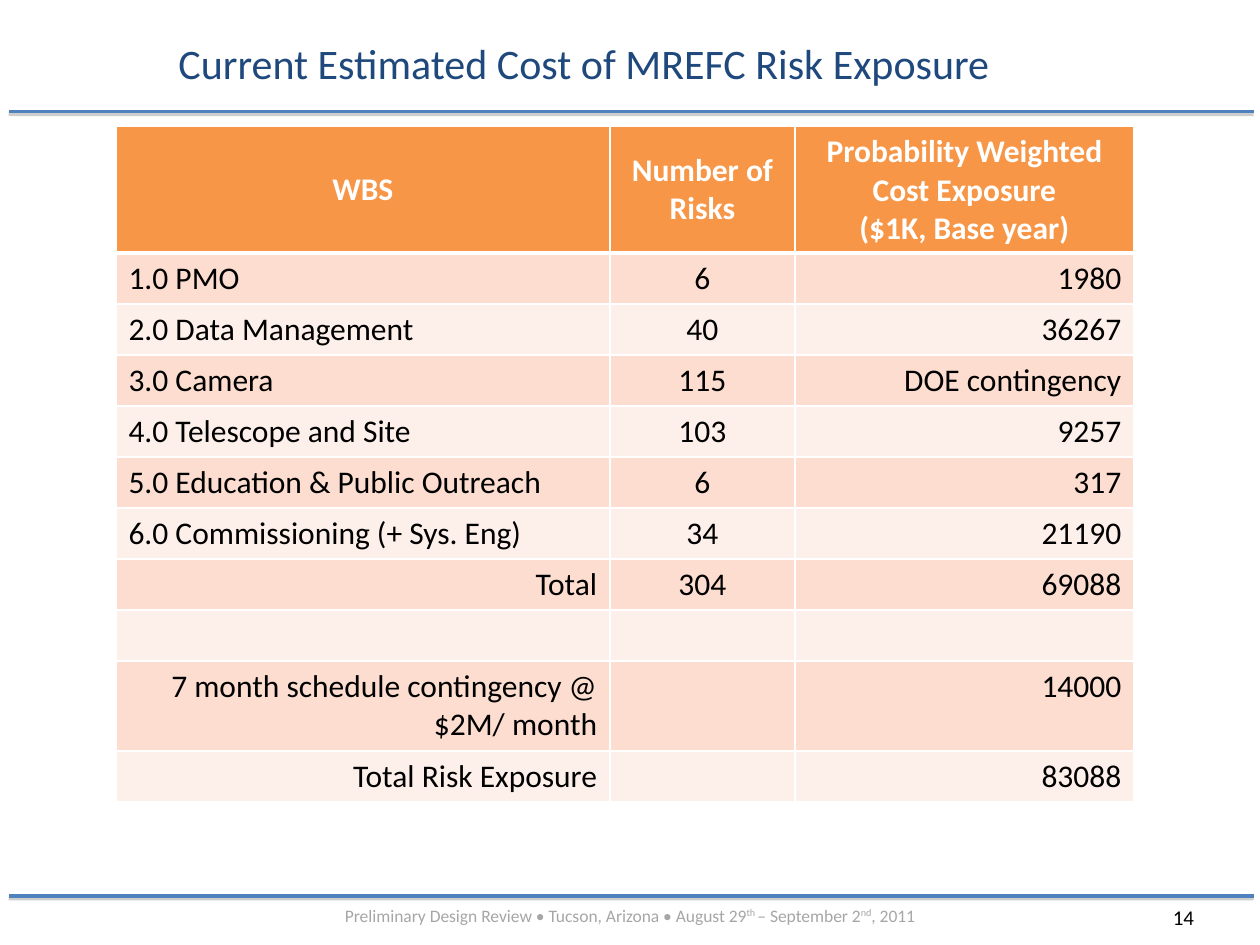
from lxml import etree
from pptx import Presentation
from pptx.dml.color import RGBColor
from pptx.enum.shapes import MSO_CONNECTOR
from pptx.enum.text import MSO_ANCHOR, PP_ALIGN
from pptx.oxml import parse_xml
from pptx.oxml.ns import nsdecls, qn
from pptx.util import Pt

LEFT, CENTER, RIGHT = PP_ALIGN.LEFT, PP_ALIGN.CENTER, PP_ALIGN.RIGHT
TOP, MIDDLE = MSO_ANCHOR.TOP, MSO_ANCHOR.MIDDLE
STRAIGHT = MSO_CONNECTOR.STRAIGHT

BLACK = RGBColor(0x00, 0x00, 0x00)
WHITE = RGBColor(0xFF, 0xFF, 0xFF)
GREY = RGBColor(0xA6, 0xA6, 0xA6)
NAVY = RGBColor(0x1F, 0x49, 0x7D)
BLUE = RGBColor(0x4F, 0x81, 0xBD)
ORANGE = RGBColor(0xF7, 0x96, 0x46)
DARK_BAND = RGBColor(0xFC, 0xDD, 0xCF)
LIGHT_BAND = RGBColor(0xFD, 0xEF, 0xE9)

TITLE_FORMAT = {"name": "Calibri", "size": Pt(24)}
FOOTER_FORMAT = {"name": "Calibri", "size": Pt(10)}
NUMBER_FORMAT = {"name": "Calibri", "size": Pt(12)}
HEADER_FORMAT = {"name": "Calibri", "size": Pt(18), "bold": True}
BODY_FORMAT = {"name": "Calibri", "size": Pt(18), "bold": False}

FOOTER_RUNS = [
    ("Preliminary Design Review • Tucson, Arizona • August 29", False),
    ("th ", True),
    ("– September 2", False),
    ("nd", True),
    (", 2011", False),
]
HEADERS = ["WBS", "Number of Risks", "Probability Weighted Cost Exposure\n($1K, Base year)"]
ITEMS = [
    ("1.0 PMO", "6", "1980"),
    ("2.0 Data Management", "40", "36267"),
    ("3.0 Camera", "115", "DOE contingency"),
    ("4.0 Telescope and Site", "103", "9257"),
    ("5.0 Education & Public Outreach", "6", "317"),
    ("6.0 Commissioning (+ Sys. Eng)", "34", "21190"),
]
TOTALS = [
    ("Total", "304", "69088"),
    ("", "", ""),
    ("7 month schedule contingency @ $2M/ month", "", "14000"),
    ("Total Risk Exposure", "", "83088"),
]
COLUMN_WIDTHS = [282.24, 105.84, 193.68]
HEADER_HEIGHT, ROW_HEIGHT, TALL_HEIGHT = 72.3, 29.16, 51.4
TALL_ROW = 9


def apply_format(font, values, color):
    """Set font attributes and colour."""
    for name, value in values.items():
        setattr(font, name, value)
    font.color.rgb = color


def add_text(slide, box, runs, values, color, align=LEFT, anchor=TOP):
    """Add a one-paragraph text box of (text, superscript) runs."""
    frame = slide.shapes.add_textbox(*map(Pt, box)).text_frame
    frame.word_wrap = True
    frame.vertical_anchor = anchor
    paragraph = frame.paragraphs[0]
    paragraph.alignment = align
    for text, superscript in runs:
        run = paragraph.add_run()
        run.text = text
        apply_format(run.font, values, color)
        if superscript:
            run.font._element.set("baseline", "30000")


def add_rule(slide, y):
    """Add a horizontal blue rule with a soft grey shadow."""
    rule = slide.shapes.add_connector(STRAIGHT, Pt(5), Pt(y), Pt(716.4), Pt(y))
    rule.line.color.rgb = BLUE
    rule.line.width = Pt(2)
    rule._element.spPr.append(parse_xml(
        f'<a:effectLst {nsdecls("a")}><a:outerShdw dist="20000" dir="5400000" rotWithShape="0">'
        '<a:srgbClr val="808080"><a:alpha val="38000"/></a:srgbClr>'
        '</a:outerShdw></a:effectLst>'))


def set_borders(cell, bottom, top):
    """Give a cell white borders of the stated bottom and top widths."""
    properties = cell._tc.get_or_add_tcPr()
    for side, width in (("L", 1), ("R", 1), ("T", top), ("B", bottom)):
        line = etree.SubElement(properties, qn(f"a:ln{side}"), w=str(Pt(width)))
        fill = etree.SubElement(line, qn("a:solidFill"))
        etree.SubElement(fill, qn("a:srgbClr"), val=str(WHITE))


def fill_cell(cell, text, fill, values, color, align, anchor=TOP, bottom=1, top=1):
    """Write, format and colour one table cell."""
    set_borders(cell, bottom, top)
    cell.fill.solid()
    cell.fill.fore_color.rgb = fill
    cell.vertical_anchor = anchor
    cell.text = text
    for paragraph in cell.text_frame.paragraphs:
        paragraph.alignment = align
        for run in paragraph.runs:
            apply_format(run.font, values, color)


def add_risk_table(slide):
    """Add the table of risk counts and cost exposure."""
    rows = ITEMS + TOTALS
    heights = [HEADER_HEIGHT] + [ROW_HEIGHT] * len(rows)
    heights[TALL_ROW] = TALL_HEIGHT
    table = slide.shapes.add_table(
        len(heights), len(COLUMN_WIDTHS), Pt(66.24), Pt(72.3),
        Pt(sum(COLUMN_WIDTHS)), Pt(sum(heights))).table
    for column, width in zip(table.columns, COLUMN_WIDTHS):
        column.width = Pt(width)
    for row, height in zip(table.rows, heights):
        row.height = Pt(height)
    for column, text in enumerate(HEADERS):
        fill_cell(table.cell(0, column), text, ORANGE, HEADER_FORMAT, WHITE,
                  CENTER, MIDDLE, bottom=3)
    for index, texts in enumerate(rows, start=1):
        fill = DARK_BAND if index % 2 else LIGHT_BAND
        label_align = LEFT if index <= len(ITEMS) else RIGHT
        for column, align in enumerate((label_align, CENTER, RIGHT)):
            fill_cell(table.cell(index, column), texts[column], fill, BODY_FORMAT,
                      BLACK, align, top=3 if index == 1 else 1)


def main():
    """Build and save the slide."""
    presentation = Presentation()
    presentation.slide_width, presentation.slide_height = Pt(720), Pt(540)
    slide = presentation.slides.add_slide(presentation.slide_layouts[6])
    for y in (63.7, 511.9):
        add_rule(slide, y)
    add_text(slide, (663.12, 513.36, 44.64, 21.6), [("14", False)], NUMBER_FORMAT, BLACK)
    add_text(slide, (36, 513.36, 648, 19.44), FOOTER_RUNS, FOOTER_FORMAT, GREY, CENTER)
    add_text(slide, (90, 11.52, 487.44, 48.96),
             [("Current Estimated Cost of MREFC Risk Exposure", False)],
             TITLE_FORMAT, NAVY, CENTER, MIDDLE)
    add_risk_table(slide)
    presentation.save("out.pptx")


if __name__ == "__main__":
    main()
